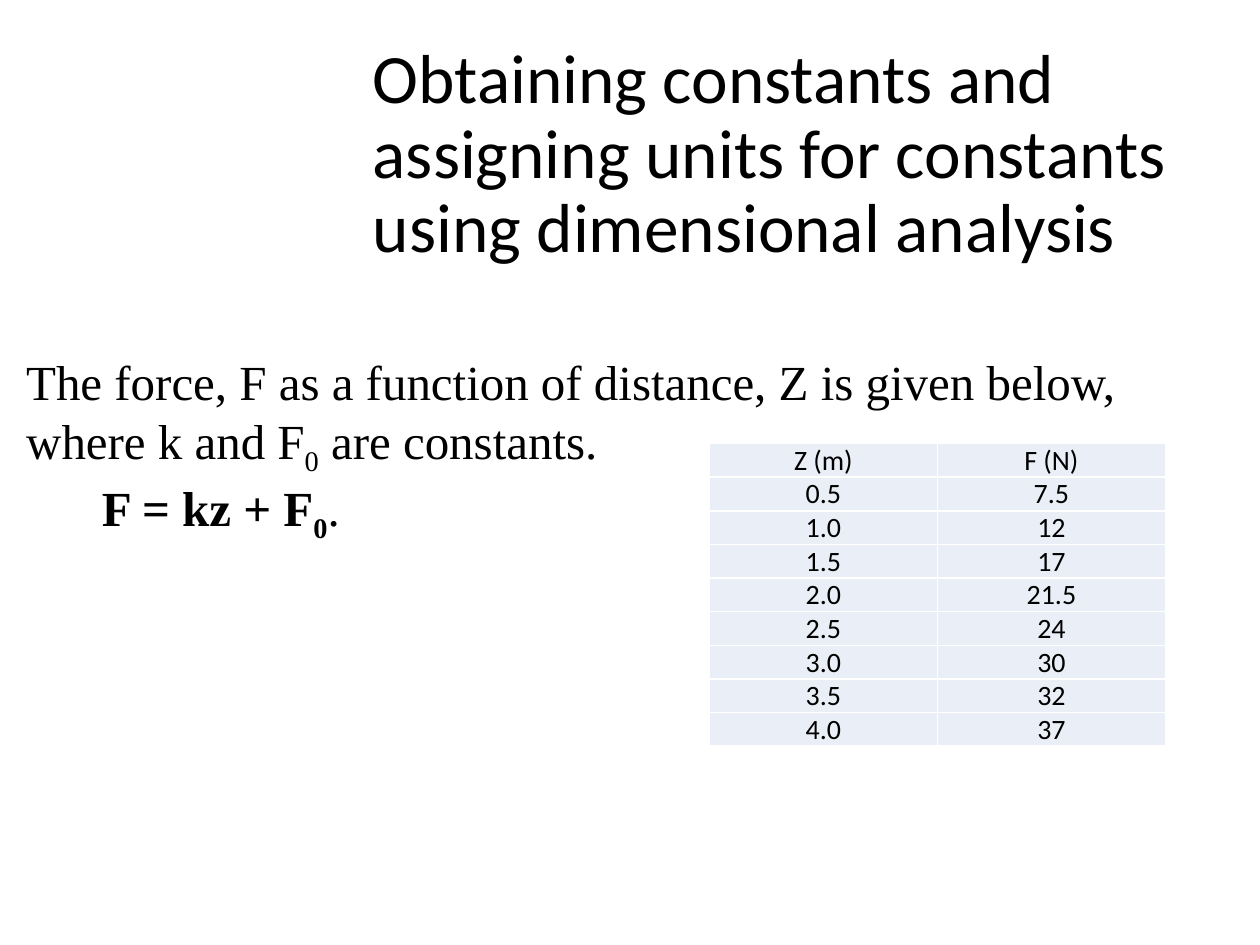
import pptx
import pptx.util
import pptx.dml.color
import pptx.enum.text
import pptx.oxml
import pptx.oxml.ns


def color(value):
    return pptx.dml.color.RGBColor.from_string(value)


def style(font, name, size):
    font.name = name
    font.size = pptx.util.Pt(size)
    font.color.rgb = color("000000")


deck = pptx.Presentation()
deck.slide_width = pptx.util.Inches(10)
deck.slide_height = pptx.util.Inches(7.5)
page = deck.slides.add_slide(deck.slide_layouts[6])
column = deck.slide_width / 100
row = deck.slide_height / 75

title = page.shapes.add_textbox(
    int(28.6 * column), int(8.1 * row), int(73.1 * column), int(14.5 * row))
title.text_frame.word_wrap = True
title.text_frame.vertical_anchor = pptx.enum.text.MSO_ANCHOR.MIDDLE
title.text_frame.margin_bottom = int(6.5 * row)
title.text_frame.text = (
    "Obtaining constants and assigning units for constants using dimensional analysis")
para = title.text_frame.paragraphs[0]
para.line_spacing = 0.9
style(para.runs[0].font, "Calibri", 39.6)

problem = page.shapes.add_textbox(
    int(1.1 * column), int(27.4 * row), int(89.6 * column), int(15.1 * row))
problem.text_frame.word_wrap = True
statement = problem.text_frame.paragraphs[0]
equation = problem.text_frame.add_paragraph()
equation.alignment = pptx.enum.text.PP_ALIGN.JUSTIFY
equation._p.get_or_add_pPr().set("indent", str(int(6 * column)))
passages = [
    (statement, "The force, F as a function of distance, Z is given below, where k and F", False, False),
    (statement, "0", False, True),
    (statement, " are constants.", False, False),
    (equation, "F = kz + F", True, False),
    (equation, "0", True, True),
    (equation, ".", False, False),
]
for para, words, bold, subscript in passages:
    span = para.add_run()
    span.text = words
    style(span.font, "Times New Roman", 28)
    span.font.bold = bold
    if subscript:
        span._r.get_or_add_rPr().set("baseline", "-25000")

readings = [
    ("Z (m)", "F (N)"), ("0.5", "7.5"), ("1.0", "12"),
    ("1.5", "17"), ("2.0", "21.5"), ("2.5", "24"),
    ("3.0", "30"), ("3.5", "32"), ("4.0", "37"),
]
table = page.shapes.add_table(
    len(readings), 2, int(56.3 * column), int(35.2 * row),
    int(36.2 * column), int(24 * row)).table
for row_number, reading in enumerate(readings):
    for column_number, value in enumerate(reading):
        cell = table.cell(row_number, column_number)
        cell.text = value
        cell.margin_left = cell.margin_right = 0
        cell.margin_top = cell.margin_bottom = 0
        cell.vertical_anchor = pptx.enum.text.MSO_ANCHOR.MIDDLE
        cell.fill.solid()
        cell.fill.fore_color.rgb = color("EAEFF7")
        para = cell.text_frame.paragraphs[0]
        para.alignment = pptx.enum.text.PP_ALIGN.CENTER
        style(para.runs[0].font, "Calibri", 16)
        para.runs[0].font.bold = False
        for position, side in enumerate(("lnL", "lnR", "lnT", "lnB")):
            border = pptx.oxml.parse_xml(
                f'<a:{side} {pptx.oxml.ns.nsdecls("a")} w="12700">'
                '<a:solidFill><a:srgbClr val="FFFFFF"/></a:solidFill>'
                f'</a:{side}>')
            cell._tc.get_or_add_tcPr().insert(position, border)

deck.save("out.pptx")
